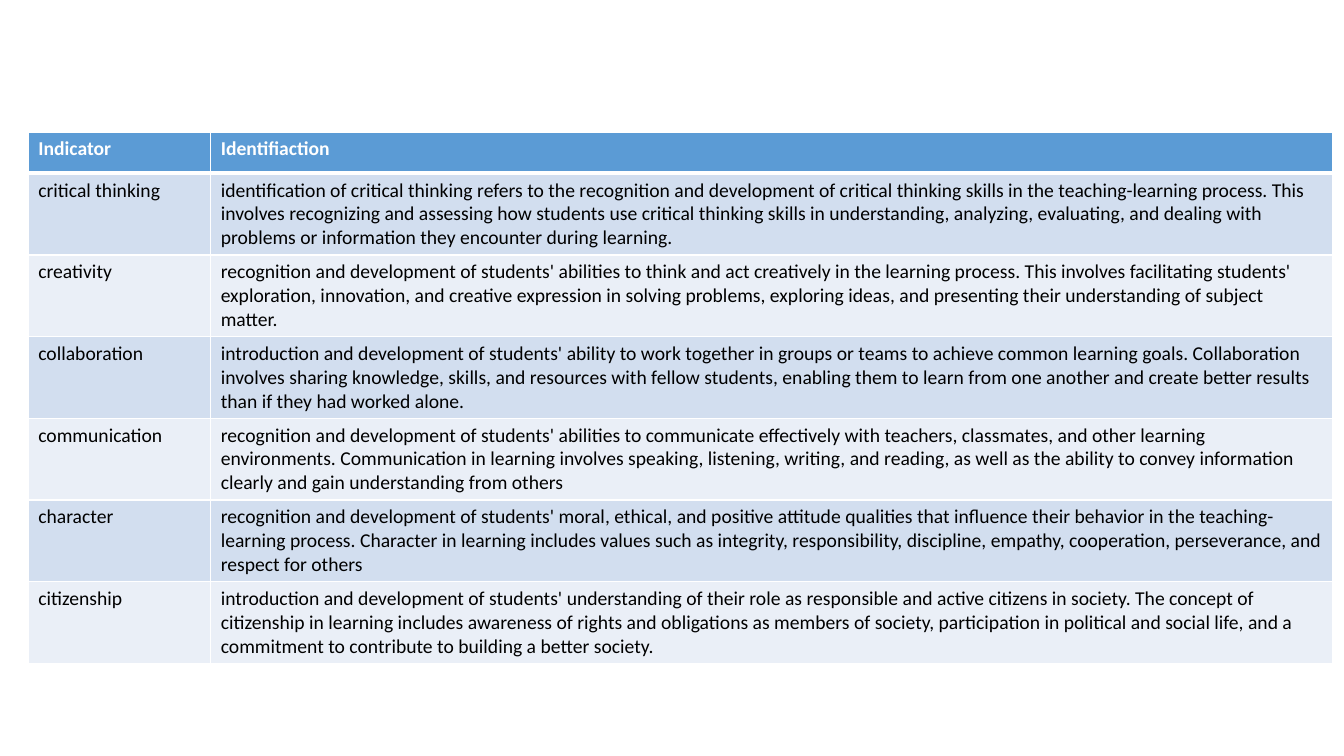
from typing import NamedTuple

from lxml.etree import SubElement
from pptx import Presentation
from pptx.dml.color import RGBColor
from pptx.oxml.ns import qn
from pptx.slide import Slide
from pptx.table import _Cell as Cell
from pptx.util import Emu, Pt

PX = 9144  # EMU per px, 100 px to the inch
FONT = "Calibri"
FONT_SIZE = Pt(14)
WHITE = RGBColor(0xFF, 0xFF, 0xFF)
BLACK = RGBColor(0x00, 0x00, 0x00)
HEADER_BLUE = RGBColor(0x5B, 0x9B, 0xD5)
BAND_COLORS = (RGBColor(0xD2, 0xDE, 0xEF), RGBColor(0xEA, 0xEF, 0xF7))

COLUMN_WIDTHS = (181, 1113)
HEADER_HEIGHT = 41
ROW_HEIGHT = 81
THIN, THICK = Pt(1), Pt(3)


class Indicator(NamedTuple):
    name: str
    identification: str


HEADER = Indicator("Indicator", "Identifiaction")
INDICATORS = (
    Indicator(
        "critical thinking",
        "identification of critical thinking refers to the recognition and development of "
        "critical thinking skills in the teaching-learning process. This involves recognizing "
        "and assessing how students use critical thinking skills in understanding, analyzing, "
        "evaluating, and dealing with problems or information they encounter during learning.",
    ),
    Indicator(
        "creativity",
        "recognition and development of students' abilities to think and act creatively in the "
        "learning process. This involves facilitating students' exploration, innovation, and "
        "creative expression in solving problems, exploring ideas, and presenting their "
        "understanding of subject matter.",
    ),
    Indicator(
        "collaboration",
        "introduction and development of students' ability to work together in groups or teams "
        "to achieve common learning goals. Collaboration involves sharing knowledge, skills, and "
        "resources with fellow students, enabling them to learn from one another and create "
        "better results than if they had worked alone.",
    ),
    Indicator(
        "communication",
        "recognition and development of students' abilities to communicate effectively with "
        "teachers, classmates, and other learning environments. Communication in learning "
        "involves speaking, listening, writing, and reading, as well as the ability to convey "
        "information clearly and gain understanding from others",
    ),
    Indicator(
        "character",
        "recognition and development of students' moral, ethical, and positive attitude "
        "qualities that influence their behavior in the teaching-learning process. Character in "
        "learning includes values such as integrity, responsibility, discipline, empathy, "
        "cooperation, perseverance, and respect for others",
    ),
    Indicator(
        "citizenship",
        "introduction and development of students' understanding of their role as responsible "
        "and active citizens in society. The concept of citizenship in learning includes "
        "awareness of rights and obligations as members of society, participation in political "
        "and social life, and a commitment to contribute to building a better society.",
    ),
)


def px(length: int) -> Emu:
    return Emu(length * PX)


def write_cell(cell: Cell, text: str, color: RGBColor, bold: bool) -> None:
    run = cell.text_frame.paragraphs[0].add_run()
    run.text = text
    run.font.name = FONT
    run.font.size = FONT_SIZE
    run.font.bold = bold
    run.font.color.rgb = color


def set_borders(cell: Cell, top: int, bottom: int) -> None:
    """Give the cell white borders; call before its fill is set."""
    properties = cell._tc.get_or_add_tcPr()
    for side, width in (("L", THIN), ("R", THIN), ("T", top), ("B", bottom)):
        line = SubElement(properties, qn(f"a:ln{side}"), w=str(width))
        fill = SubElement(line, qn("a:solidFill"))
        SubElement(fill, qn("a:srgbClr"), val=str(WHITE))


def add_indicator_table(slide: Slide) -> None:
    rows = (HEADER, *INDICATORS)
    height = HEADER_HEIGHT + ROW_HEIGHT * len(INDICATORS)
    table = slide.shapes.add_table(
        len(rows), len(COLUMN_WIDTHS), px(28), px(131), px(sum(COLUMN_WIDTHS)), px(height)
    ).table
    for column, width in zip(table.columns, COLUMN_WIDTHS):
        column.width = px(width)
    for index, indicator in enumerate(rows):
        is_header = index == 0
        table.rows[index].height = px(HEADER_HEIGHT if is_header else ROW_HEIGHT)
        for cell, text in zip(table.rows[index].cells, indicator):
            set_borders(cell, THICK if index == 1 else THIN, THICK if is_header else THIN)
            cell.fill.solid()
            cell.fill.fore_color.rgb = HEADER_BLUE if is_header else BAND_COLORS[(index - 1) % 2]
            write_cell(cell, text, WHITE if is_header else BLACK, is_header)


def main() -> None:
    presentation = Presentation()
    presentation.slide_width, presentation.slide_height = px(1333), px(750)
    slide = presentation.slides.add_slide(presentation.slide_layouts.get_by_name("Blank"))
    add_indicator_table(slide)
    presentation.save("out.pptx")


if __name__ == "__main__":
    main()
